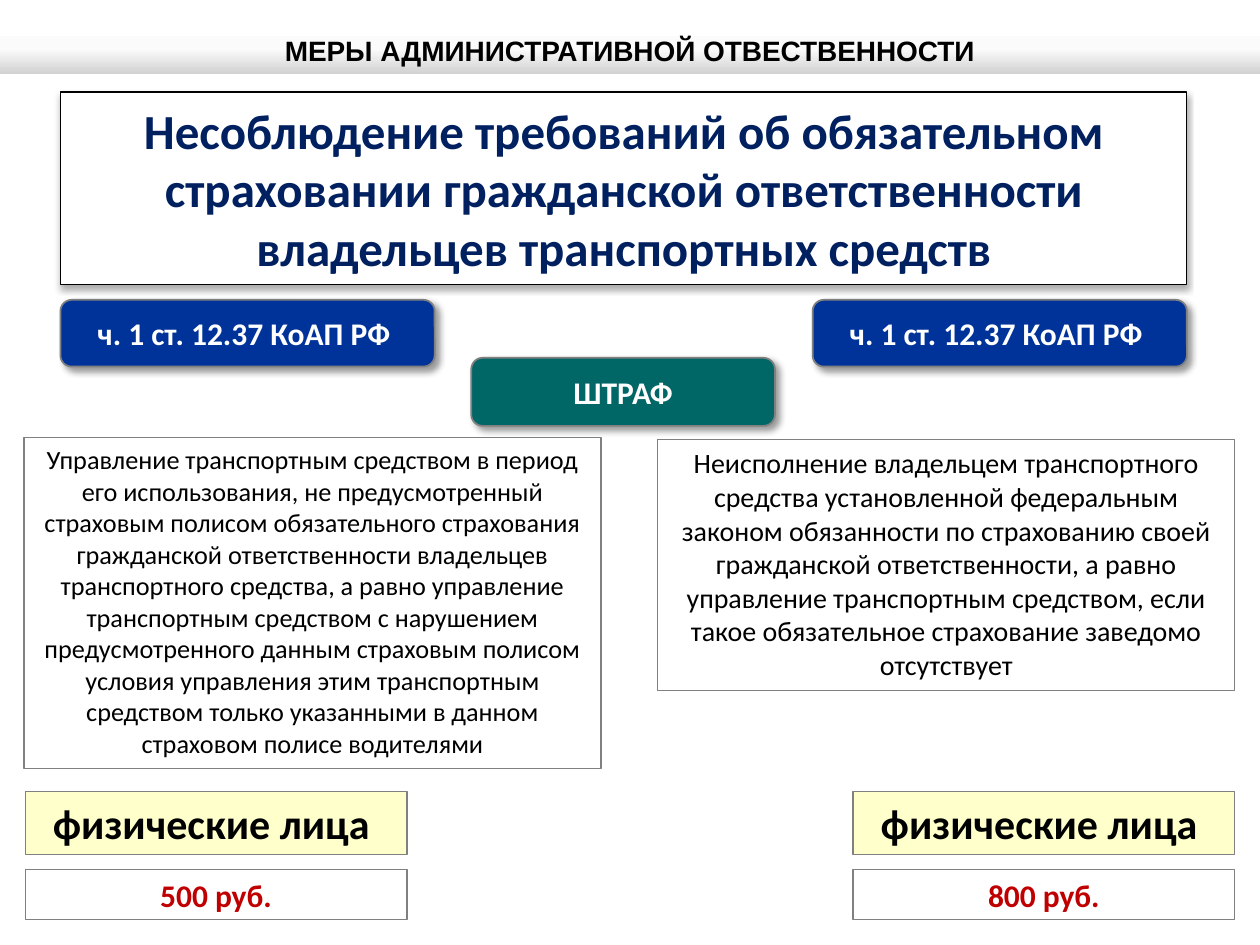
from copy import deepcopy

from lxml import etree
from pptx import Presentation
from pptx.dml.color import RGBColor
from pptx.enum import shapes, text
from pptx.oxml import parse_xml
from pptx.oxml.ns import nsdecls, qn
from pptx.util import Inches, Pt


def color(value):
    return RGBColor.from_string(value)


def add_box(kind, bounds, content, size, font_color, fill=None, line=("808080", 0.75),
            bold=True, middle=False, shadow=None):
    shape = slide.shapes.add_shape(kind, *map(Inches, bounds))
    shape.shadow.inherit = False
    if fill:
        shape.fill.solid()
        shape.fill.fore_color.rgb = color(fill)
    else:
        shape.fill.background()
    shape.line.color.rgb = color(line[0])
    shape.line.width = Pt(line[1])
    if shadow:
        opacity, blur, distance, angle = shadow
        effects = shape._element.spPr.find(qn("a:effectLst"))
        effects.append(parse_xml(
            f'<a:outerShdw {nsdecls("a")} blurRad="{Pt(blur)}" dist="{Pt(distance)}" '
            f'dir="{angle * 60000}" algn="ctr" rotWithShape="0"><a:srgbClr val="000000">'
            f'<a:alpha val="{opacity * 1000}"/></a:srgbClr></a:outerShdw>'))
    frame = shape.text_frame
    frame.word_wrap = True
    frame.vertical_anchor = text.MSO_ANCHOR.MIDDLE if middle else text.MSO_ANCHOR.TOP
    frame.text = content
    paragraph = frame.paragraphs[0]
    paragraph.alignment = text.PP_ALIGN.CENTER
    paragraph.font.name = "Calibri"
    paragraph.font.size = Pt(size)
    paragraph.font.bold = bold
    paragraph.font.color.rgb = color(font_color)
    return shape


presentation = Presentation()
presentation.slide_width = Inches(10)
presentation.slide_height = Inches(7.5)
slide = presentation.slides.add_slide(presentation.slide_layouts[5])
RECTANGLE = shapes.MSO_SHAPE.RECTANGLE
ROUNDED = shapes.MSO_SHAPE.ROUNDED_RECTANGLE

title = slide.shapes.title
title.left, title.top, title.width, title.height = map(Inches, (0, 0.18, 10, 0.41))
title.fill.gradient()
title.fill.gradient_angle = 270
stop_list = title._element.spPr.find(qn("a:gradFill")).find(qn("a:gsLst"))
stop_list.insert(1, deepcopy(stop_list[0]))
gradient = [(0, "FFFFFF"), (0.5, "FBFBFB"), (1, "D1D1D1")]
for stop, (position, value) in zip(title.fill.gradient_stops, gradient):
    stop.position = position
    stop.color.rgb = color(value)
frame = title.text_frame
frame.auto_size = text.MSO_AUTO_SIZE.NONE
frame.vertical_anchor = text.MSO_ANCHOR.TOP
frame.text = "МЕРЫ АДМИНИСТРАТИВНОЙ ОТВЕСТВЕННОСТИ"
paragraph = frame.paragraphs[0]
paragraph.alignment = text.PP_ALIGN.CENTER
paragraph.line_spacing = 1.15
paragraph.font.name = "Arial"
paragraph.font.size = Pt(16)
paragraph.font.bold = True
paragraph.font.color.rgb = color("000000")

subject = add_box(
    RECTANGLE, (0.48, 0.73, 8.94, 1.53),
    "Несоблюдение требований об обязательном страховании гражданской ответственности "
    "владельцев транспортных средств",
    28, "002060", "FFFFFF", ("000000", 0.75), middle=True, shadow=(32, 3.5, 2.2, 90))
subject.text_frame.margin_left = subject.text_frame.margin_right = 0
subject.text_frame.margin_top = subject.text_frame.margin_bottom = Inches(0.06)

label_style = {"line": ("808080", 1), "middle": True, "shadow": (40, 4, 3, 45)}
add_box(ROUNDED, (3.74, 2.84, 2.41, 0.54), "ШТРАФ", 18, "FFFFFF", "006666", **label_style)

violations = [
    (0.48, 0.2, "500 руб.", (0.19, 3.47, 4.58, 2.63), 15,
     "Управление транспортным средством в период его использования, не предусмотренный "
     "страховым полисом обязательного страхования гражданской ответственности владельцев "
     "транспортного средства, а равно управление транспортным средством с нарушением "
     "предусмотренного данным страховым полисом условия управления этим транспортным "
     "средством только указанными в данном страховом полисе водителями"),
    (6.45, 6.77, "800 руб.", (5.22, 3.49, 4.58, 1.99), 16,
     "Неисполнение владельцем транспортного средства установленной федеральным законом "
     "обязанности по страхованию своей гражданской ответственности, а равно управление "
     "транспортным средством, если такое обязательное страхование заведомо отсутствует"),
]
for article_left, fine_left, fine, bounds, size, description in violations:
    add_box(ROUNDED, (article_left, 2.38, 2.97, 0.53), "ч. 1 ст. 12.37 КоАП РФ ",
            18, "FFFFFF", "003399", **label_style)
    add_box(RECTANGLE, bounds, description, size, "000000", "FFFFFF", bold=False)
    add_box(RECTANGLE, (fine_left, 6.28, 3.03, 0.5), "физические лица ",
            24, "000000", "FFFFCC")
    add_box(RECTANGLE, (fine_left, 6.9, 3.03, 0.4), fine, 18, "C00000")

presentation.save("out.pptx")
